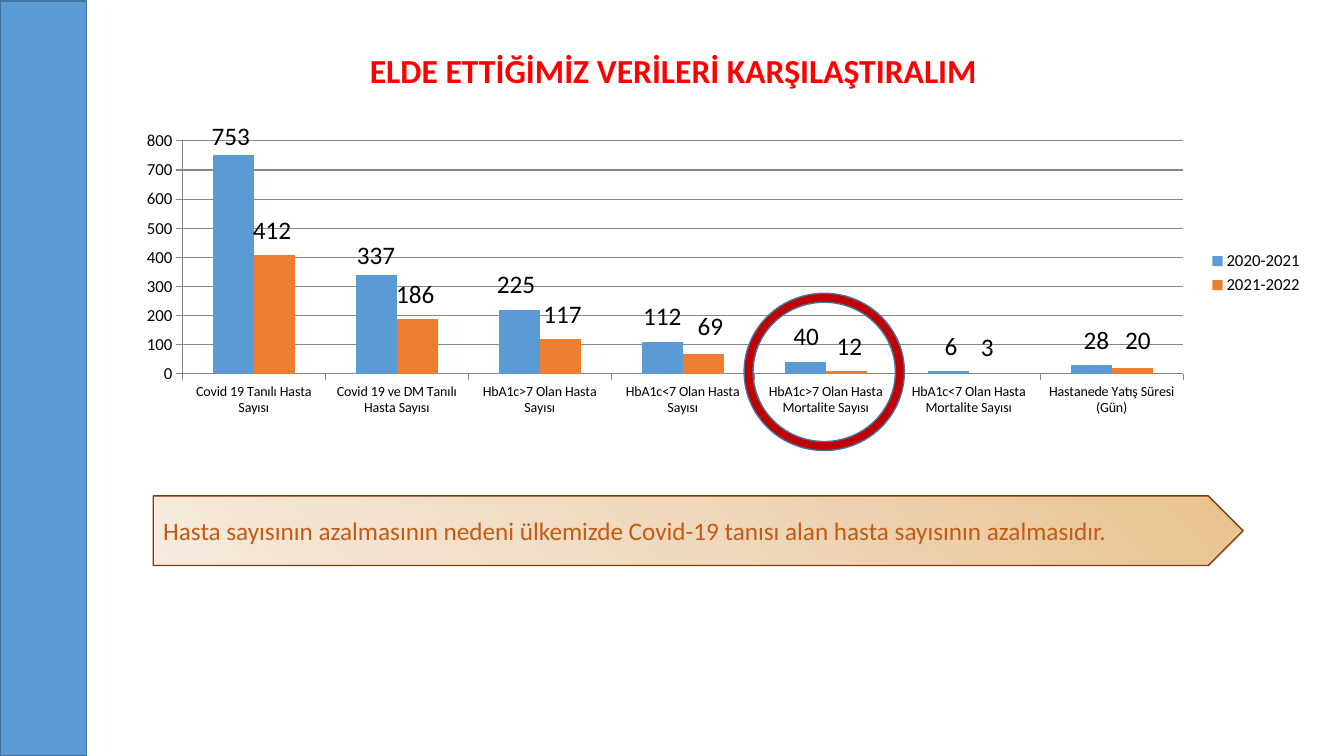
from pptx import Presentation
from pptx.chart.data import CategoryChartData
from pptx.dml.color import RGBColor
from pptx.enum.chart import XL_CHART_TYPE, XL_LEGEND_POSITION, XL_TICK_MARK
from pptx.enum.shapes import MSO_SHAPE
from pptx.enum.text import MSO_ANCHOR, PP_ALIGN
from pptx.oxml import parse_xml
from pptx.oxml.ns import nsdecls
from pptx.util import Inches, Pt

COLORS = {
    "blue": "5B9BD5", "orange": "ED7D31", "edge": "43739E", "ring": "C00000",
    "brown": "843C0B", "rust": "C55A11", "red": "FF0000", "black": "000000",
    "grid": "868686",
}
FONT = "Calibri"


def color(name):
    return RGBColor.from_string(COLORS[name])


def write(shape, text, size, tint, bold=False):
    frame = shape.text_frame
    frame.word_wrap = True
    frame.text = text
    frame.paragraphs[0].alignment = PP_ALIGN.LEFT
    font = frame.paragraphs[0].runs[0].font
    font.name, font.size, font.bold = FONT, Pt(size), bold
    font.color.rgb = color(tint)


prs = Presentation()
prs.slide_width, prs.slide_height = Inches(13.33), Inches(7.5)
slide = prs.slides.add_slide(prs.slide_layouts[6])
shapes = slide.shapes

# Side band
band = shapes.add_shape(MSO_SHAPE.RECTANGLE, 0, Inches(0.01), Inches(0.86), Inches(7.49))
band.fill.solid()
band.fill.fore_color.rgb = color("blue")

# Arrow with the conclusion, shaded from its top right corner
arrow = shapes.add_shape(MSO_SHAPE.PENTAGON, Inches(1.52), Inches(4.92), Inches(10.81), Inches(0.69))
stops = "".join(
    f'<a:gs pos="{pos}000"><a:srgbClr val="{tone}"/></a:gs>'
    for pos, tone in [(0, "E9C28F"), (50, "EFD8BC"), (100, "F6EBDE")]
)
arrow._element.spPr.append(parse_xml(
    f'<a:gradFill {nsdecls("a")} rotWithShape="1"><a:gsLst>{stops}</a:gsLst>'
    '<a:path path="circle"><a:fillToRect l="100000" b="100000"/></a:path></a:gradFill>'
))
arrow.text_frame.vertical_anchor = MSO_ANCHOR.MIDDLE
write(arrow, "Hasta sayısının azalmasının nedeni ülkemizde Covid-19 tanısı alan hasta sayısının azalmasıdır.",
      18, "rust")

# Chart data, to the nearest ten
data = CategoryChartData()
data.categories = [
    "Covid 19 Tanılı Hasta Sayısı", "Covid 19 ve DM Tanılı Hasta Sayısı",
    "HbA1c>7 Olan Hasta Sayısı", "HbA1c<7 Olan Hasta Sayısı",
    "HbA1c>7 Olan Hasta Mortalite Sayısı", "HbA1c<7 Olan Hasta Mortalite Sayısı",
    "Hastanede Yatış Süresi (Gün)",
]
data.add_series("2020-2021", [750, 340, 220, 110, 40, 10, 30])
data.add_series("2021-2022", [410, 190, 120, 70, 10, 0, 20])

# Chart
chart = shapes.add_chart(XL_CHART_TYPE.COLUMN_CLUSTERED, Inches(1.22), Inches(1.24),
                         Inches(11.81), Inches(2.94), data).chart
chart.has_title = False
chart.font.name, chart.font.size = FONT, Pt(18)
chart.font.color.rgb = color("black")
plot = chart.plots[0]
plot.gap_width, plot.overlap, plot.vary_by_categories = 150, 0, False
for series, tint in zip(plot.series, ["blue", "orange"]):
    series.format.fill.solid()
    series.format.fill.fore_color.rgb = color(tint)

# Axes and legend
values = chart.value_axis
values.minimum_scale, values.maximum_scale, values.major_unit = 0, 800, 100
values.has_major_gridlines = True
for axis, size in [(chart.category_axis, 10), (values, 12)]:
    axis.major_tick_mark = XL_TICK_MARK.OUTSIDE
    axis.tick_labels.font.size = Pt(size)
for part in [chart.category_axis, values, values.major_gridlines]:
    part.format.line.color.rgb = color("grid")
    part.format.line.width = Pt(0.75)
chart.has_legend = True
chart.legend.position = XL_LEGEND_POSITION.RIGHT
chart.legend.include_in_layout = False
chart.legend.font.size = Pt(12)

# Exact counts, a pair per category: text, left, top, width
counts = [
    ("753", 2, 1.14, 0.77), ("412", 2.41, 2.08, 0.86),
    ("337", 3.44, 2.33, 0.65), ("186", 3.83, 2.71, 0.64),
    ("225", 4.83, 2.61, 0.64), ("117", 5.29, 2.91, 0.6),
    ("112", 6.28, 2.93, 0.66), ("69", 6.82, 3.03, 0.58),
    ("40", 7.77, 3.13, 0.61), ("12", 8.2, 3.23, 0.59),
    ("6", 9.27, 3.23, 0.42), ("3", 9.63, 3.24, 0.47),
    ("28", 10.65, 3.17, 0.55), ("20", 11.06, 3.17, 0.49),
]
for count, left, top, width in counts:
    label = shapes.add_textbox(Inches(left), Inches(top), Inches(width), Inches(0.4))
    write(label, count, 18, "black")

# Title
title = shapes.add_textbox(Inches(3.57), Inches(0.45), Inches(6.5), Inches(0.5))
write(title, "ELDE ETTİĞİMİZ VERİLERİ KARŞILAŞTIRALIM", 24, "red", True)

# Ring around the mortality bars
ring = shapes.add_shape(MSO_SHAPE.DONUT, Inches(7.38), Inches(2.91), Inches(1.59), Inches(1.56))
ring.adjustments[0] = 0.057
ring.fill.solid()
ring.fill.fore_color.rgb = color("ring")

# Outlines
for shape, tint in [(band, "edge"), (arrow, "brown"), (ring, "edge")]:
    shape.shadow.inherit = False
    shape.line.color.rgb = color(tint)
    shape.line.width = Pt(1)

prs.save("out.pptx")
